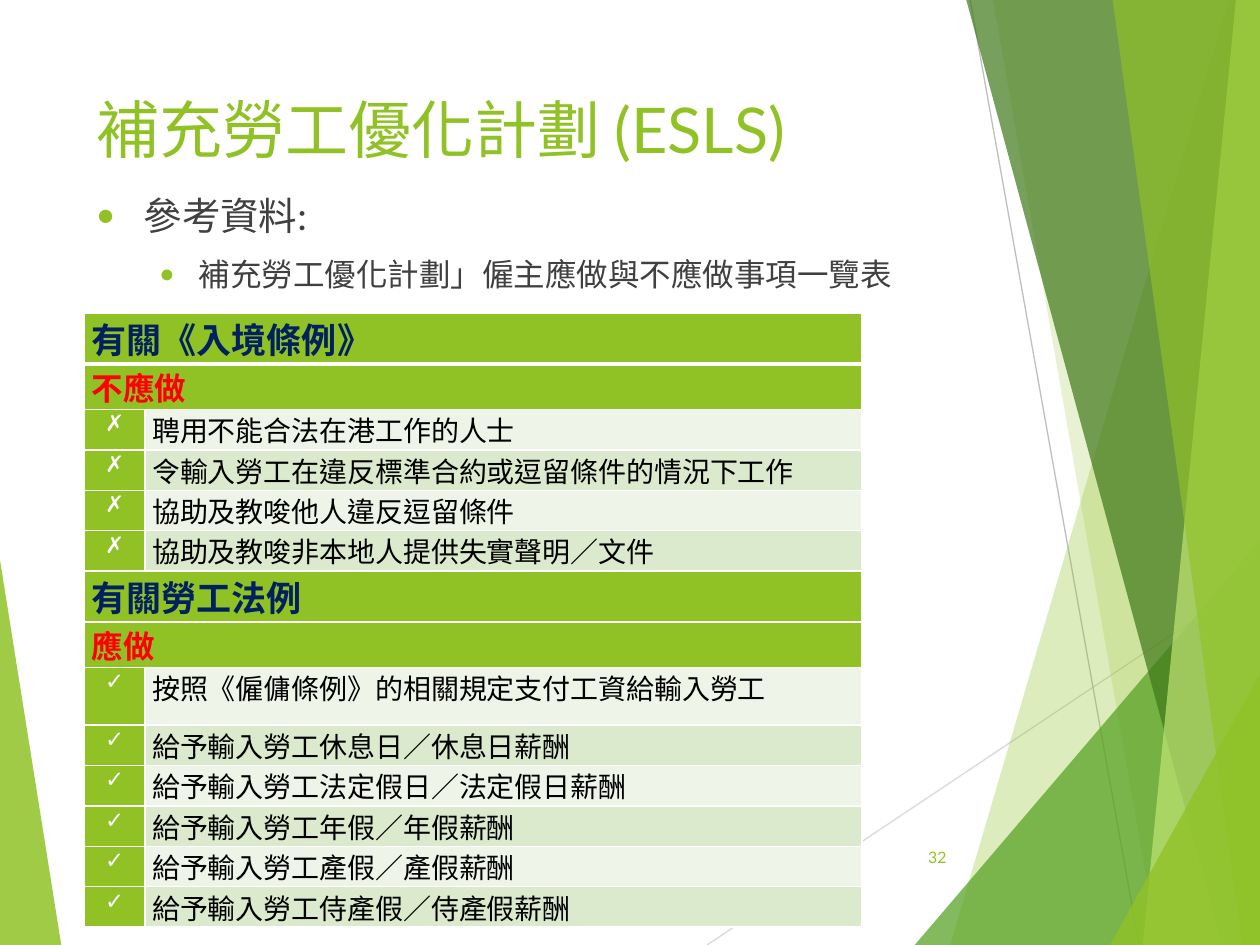
from dataclasses import dataclass

from lxml.etree import SubElement
from pptx import Presentation
from pptx.dml.color import RGBColor
from pptx.enum.shapes import MSO_CONNECTOR
from pptx.enum.text import MSO_ANCHOR, PP_ALIGN
from pptx.oxml.ns import qn
from pptx.util import Pt

WIDE, HIGH = 720, 540
FONT = "Lato"
LIME = RGBColor(0x90, 0xC2, 0x26)
GREEN = RGBColor(0x54, 0xA0, 0x21)
DARK = RGBColor(0x3F, 0x78, 0x19)
PALE = RGBColor(0xC0, 0xE4, 0x74)
GREY = RGBColor(0x40, 0x40, 0x40)
SILVER = RGBColor(0xBF, 0xBF, 0xBF)
MIST = RGBColor(0xD9, 0xD9, 0xD9)
NAVY = RGBColor(0x00, 0x20, 0x60)
RED = RGBColor(0xFF, 0, 0)
BLACK = RGBColor(0, 0, 0)
WHITE = RGBColor(0xFF, 0xFF, 0xFF)
BANDS = RGBColor(0xEE, 0xF4, 0xE8), RGBColor(0xDB, 0xE9, 0xCD)


@dataclass
class Shard:
    color: RGBColor
    alpha: int
    points: list


@dataclass
class Ray:
    color: RGBColor
    start: tuple
    end: tuple


@dataclass
class Part:
    """One table section: a title, a heading and its marked items."""
    title: str
    head: str
    mark: str
    items: list


def slant(top: float, foot: float) -> list:
    """Full-height area between a slanted left side and the slide's right edge."""
    return [(top, 0), (foot, HIGH), (WIDE, HIGH), (WIDE, 0)]


def wedge(foot: float, top: float) -> list:
    """Triangle in the lower right corner."""
    return [(foot, HIGH), (WIDE, top), (WIDE, HIGH)]


DECOR = [
    Shard(LIME, 85, [(0, 320), (35, HIGH), (0, HIGH)]),
    Ray(MIST, (404, HIGH), (WIDE, 329)),
    Ray(SILVER, (554.4, 0), (650.9, HIGH)),
    Shard(LIME, 30, slant(702, 543)),
    Shard(LIME, 20, slant(567.4, 661.7)),
    Shard(GREEN, 72, wedge(522.7, 309)),
    Shard(DARK, 70, slant(552.2, 698.4)),
    Shard(PALE, 70, slant(706.3, 653)),
    Shard(LIME, 65, slant(635.8, 710)),
    Shard(LIME, 80, wedge(634.3, 385.2)),
]

PARTS = [
    Part("有關《入境條例》", "不應做", "✗", [
        "聘用不能合法在港工作的人士",
        "令輸入勞工在違反標準合約或逗留條件的情況下工作",
        "協助及教唆他人違反逗留條件",
        "協助及教唆非本地人提供失實聲明／文件",
    ]),
    Part("有關勞工法例", "應做", "✓", [
        "按照《僱傭條例》的相關規定支付工資給輸入勞工",
        "給予輸入勞工休息日／休息日薪酬",
        "給予輸入勞工法定假日／法定假日薪酬",
        "給予輸入勞工年假／年假薪酬",
        "給予輸入勞工產假／產假薪酬",
        "給予輸入勞工侍產假／侍產假薪酬",
    ]),
]
TALL = PARTS[1].items[0]


def write(para, text: str, size: float, color: RGBColor,
          bold: bool = False, align=PP_ALIGN.LEFT) -> None:
    para.alignment = align
    run = para.add_run()
    run.text = text
    run._r.get_or_add_rPr().set("lang", "zh-TW")
    font = run.font
    font.name, font.size, font.bold = FONT, Pt(size), bold
    font.color.rgb = color


def add_shard(slide, shard: Shard) -> None:
    first, *rest = [(Pt(x), Pt(y)) for x, y in shard.points]
    pen = slide.shapes.build_freeform(*first)
    pen.add_line_segments(rest, close=True)
    shape = pen.convert_to_shape()
    shape.shadow.inherit = False
    shape.line.fill.background()
    shape.fill.solid()
    shape.fill.fore_color.rgb = shard.color
    tint = shape._element.spPr.find(qn("a:solidFill"))[0]
    SubElement(tint, qn("a:alpha"), val=str(shard.alpha * 1000))


def add_ray(slide, ray: Ray) -> None:
    ends = [Pt(v) for v in ray.start + ray.end]
    line = slide.shapes.add_connector(MSO_CONNECTOR.STRAIGHT, *ends)
    line.line.color.rgb, line.line.width = ray.color, Pt(0.75)
    SubElement(line._element.spPr, qn("a:effectLst"))


def add_box(slide, left: float, top: float, width: float, height: float,
            anchor=MSO_ANCHOR.TOP):
    box = slide.shapes.add_textbox(Pt(left), Pt(top), Pt(width), Pt(height))
    frame = box.text_frame
    frame.word_wrap, frame.vertical_anchor = True, anchor
    return frame


def add_bullet(para, left: float, hang: float) -> None:
    para.space_before = Pt(10)
    props = para._p.get_or_add_pPr()
    props.set("marL", str(Pt(left)))
    props.set("indent", str(-Pt(hang)))
    tint = SubElement(props, qn("a:buClr"))
    SubElement(tint, qn("a:srgbClr"), val=str(LIME))
    SubElement(props, qn("a:buSzPct"), val="80000")
    SubElement(props, qn("a:buFont"), typeface="Arial")
    SubElement(props, qn("a:buChar"), char="●")


def style_cell(cell, fill: RGBColor, top: float = 1, foot: float = 1) -> None:
    """Set fill, margins and white borders of the given widths."""
    props = cell._tc.get_or_add_tcPr()
    for side, width in zip("LRTB", (1, 1, top, foot)):
        edge = SubElement(props, qn(f"a:ln{side}"), w=str(Pt(width)))
        paint = SubElement(edge, qn("a:solidFill"))
        SubElement(paint, qn("a:srgbClr"), val=str(WHITE))
    cell.fill.solid()
    cell.fill.fore_color.rgb = fill
    cell.margin_left = cell.margin_right = Pt(4.2)
    cell.margin_top = cell.margin_bottom = 0


def add_grid(slide) -> None:
    count = sum(2 + len(part.items) for part in PARTS)
    grid = slide.shapes.add_table(count, 2, Pt(48.2), Pt(179), Pt(444.5), Pt(351)).table
    grid.first_row = grid.horz_banding = False
    grid.columns[0].width, grid.columns[1].width = Pt(34.6), Pt(409.9)
    row = 0
    for part in PARTS:
        for text, size, color, high in ((part.title, 20, NAVY, 29),
                                        (part.head, 18, RED, 26)):
            grid.rows[row].height = Pt(high)
            cell = grid.cell(row, 0)
            cell.merge(grid.cell(row, 1))
            for col in range(2):
                style_cell(grid.cell(row, col), LIME,
                           top=3 if row == 1 else 1, foot=3 if row == 0 else 1)
            cell.vertical_anchor = MSO_ANCHOR.MIDDLE
            write(cell.text_frame.paragraphs[0], text, size, color,
                  bold=True, align=PP_ALIGN.JUSTIFY)
            row += 1
        for i, item in enumerate(part.items):
            grid.rows[row].height = Pt(33.1 if item == TALL else 23.1)
            mark, cell = grid.cell(row, 0), grid.cell(row, 1)
            style_cell(mark, LIME)
            style_cell(cell, BANDS[i % 2])
            write(mark.text_frame.paragraphs[0], part.mark, 13, WHITE,
                  bold=True, align=PP_ALIGN.CENTER)
            write(cell.text_frame.paragraphs[0], item, 16, BLACK, align=PP_ALIGN.JUSTIFY)
            row += 1


def main() -> None:
    deck = Presentation()
    deck.slide_width, deck.slide_height = Pt(WIDE), Pt(HIGH)
    slide = deck.slides.add_slide(deck.slide_layouts[6])
    for item in DECOR:
        if isinstance(item, Shard):
            add_shard(slide, item)
        else:
            add_ray(slide, item)

    title = add_box(slide, 48, 48, 605, 50.2, MSO_ANCHOR.BOTTOM)
    write(title.paragraphs[0], "補充勞工優化計劃 (ESLS)", 36, LIME)

    body = add_box(slide, 48, 106, 610, 417.5)
    lead, sub = body.paragraphs[0], body.add_paragraph()
    sub.level = 1
    add_bullet(lead, 27, 27)
    add_bullet(sub, 58.5, 22.5)
    write(lead, "參考資料:", 22, GREY)
    write(sub, "補充勞工優化計劃」僱主應做與不應做事項一覽表", 18, GREY)

    add_grid(slide)
    number = add_box(slide, 507.6, 475.7, 40.3, 28.8, MSO_ANCHOR.MIDDLE)
    write(number.paragraphs[0], "32", 9, LIME, align=PP_ALIGN.RIGHT)
    deck.save("out.pptx")


if __name__ == "__main__":
    main()
